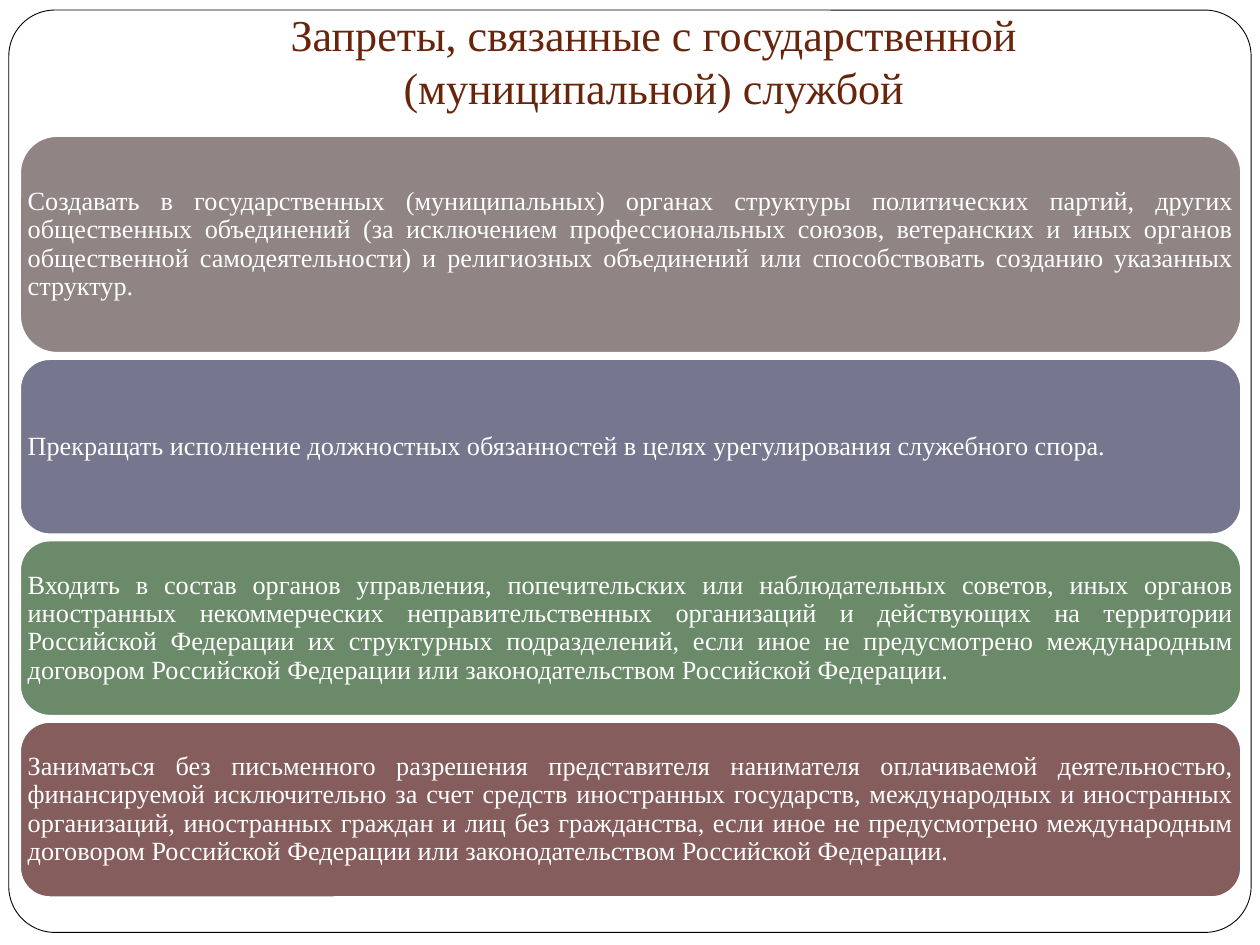
import pptx
import pptx.util
import pptx.dml.color
import pptx.enum.shapes
import pptx.enum.text

Inches = pptx.util.Inches
Pt = pptx.util.Pt
ALIGN = pptx.enum.text.PP_ALIGN
ANCHOR = pptx.enum.text.MSO_ANCHOR
ROUND = pptx.enum.shapes.MSO_SHAPE.ROUNDED_RECTANGLE

COLORS = {
    "white": "FFFFFF",
    "black": "000000",
    "title": "69240C",
    "taupe": "918485",
    "slate": "76778E",
    "green": "6A8A69",
    "wine": "855D5D",
}

TITLE = "Запреты, связанные с государственной (муниципальной) службой"

# Fill, height in inches, wording
BANS = [
    ("taupe", 1.72,
     "Создавать в государственных (муниципальных) органах структуры "
     "политических партий, других общественных объединений (за исключением "
     "профессиональных союзов, ветеранских и иных органов общественной "
     "самодеятельности) и религиозных объединений или способствовать "
     "созданию указанных структур."),
    ("slate", 1.39,
     "Прекращать исполнение должностных обязанностей в целях "
     "урегулирования служебного спора."),
    ("green", 1.39,
     "Входить в состав органов управления, попечительских или "
     "наблюдательных советов, иных органов иностранных некоммерческих "
     "неправительственных организаций и действующих на территории "
     "Российской Федерации их структурных подразделений, если иное не "
     "предусмотрено международным договором Российской Федерации или "
     "законодательством Российской Федерации."),
    ("wine", 1.39,
     "Заниматься без письменного разрешения представителя нанимателя "
     "оплачиваемой деятельностью, финансируемой исключительно за счет "
     "средств иностранных государств, международных и иностранных "
     "организаций, иностранных граждан и лиц без гражданства, если иное не "
     "предусмотрено международным договором Российской Федерации или "
     "законодательством Российской Федерации."),
]


def color(name):
    return pptx.dml.color.RGBColor.from_string(COLORS[name])


def assign(target, values):
    for key, value in values.items():
        setattr(target, key, value)


def panel(slide, box, fill, line, width, curve):
    shape = slide.shapes.add_shape(ROUND, *map(Inches, box))
    shape.shadow.inherit = False
    shape.adjustments[0] = curve
    shape.fill.solid()
    shape.fill.fore_color.rgb = color(fill)
    shape.line.color.rgb = color(line)
    shape.line.width = Pt(width)


def label(slide, box, text, ink, frame, para, size):
    area = slide.shapes.add_textbox(*map(Inches, box)).text_frame
    assign(area, {"word_wrap": True, **frame})
    line = area.paragraphs[0]
    assign(line, para)
    run = line.add_run()
    run.text = text
    assign(run.font, {"name": "Times New Roman", "size": Pt(size)})
    run.font.color.rgb = color(ink)


def heading(slide, box):
    frame = {
        "vertical_anchor": ANCHOR.BOTTOM,
        "margin_left": Inches(0.1),
        "margin_right": Inches(0.1),
        "margin_top": Inches(0.05),
        "margin_bottom": Inches(0.1),
    }
    label(slide, box, TITLE, "title", frame, {"alignment": ALIGN.CENTER}, 25.2)


def stack(slide, left, top, width, gap):
    sides = ("left", "right", "top", "bottom")
    frame = {f"margin_{side}": Inches(0.06) for side in sides}
    frame["vertical_anchor"] = ANCHOR.MIDDLE
    para = {"alignment": ALIGN.JUSTIFY, "line_spacing": 0.9}
    for fill, height, text in BANS:
        box = (left, top, width, height)
        panel(slide, box, fill, "white", 1, 0.17)
        label(slide, box, text, "white", frame, para, 15)
        top += height + gap


def main():
    deck = pptx.Presentation()
    assign(deck, {"slide_width": Inches(10), "slide_height": Inches(7.5)})
    slide = deck.slides.add_slide(deck.slide_layouts[6])

    # Page frame
    panel(slide, (0.07, 0.08, 9.86, 7.32), "white", "black", 0.5, 0.05)
    # Stacked bans
    stack(slide, 0.16, 1.08, 9.69, 0.05)
    # Title
    heading(slide, (0.94, 0.31, 8.5, 0.69))

    deck.save("out.pptx")


if __name__ == "__main__":
    main()
